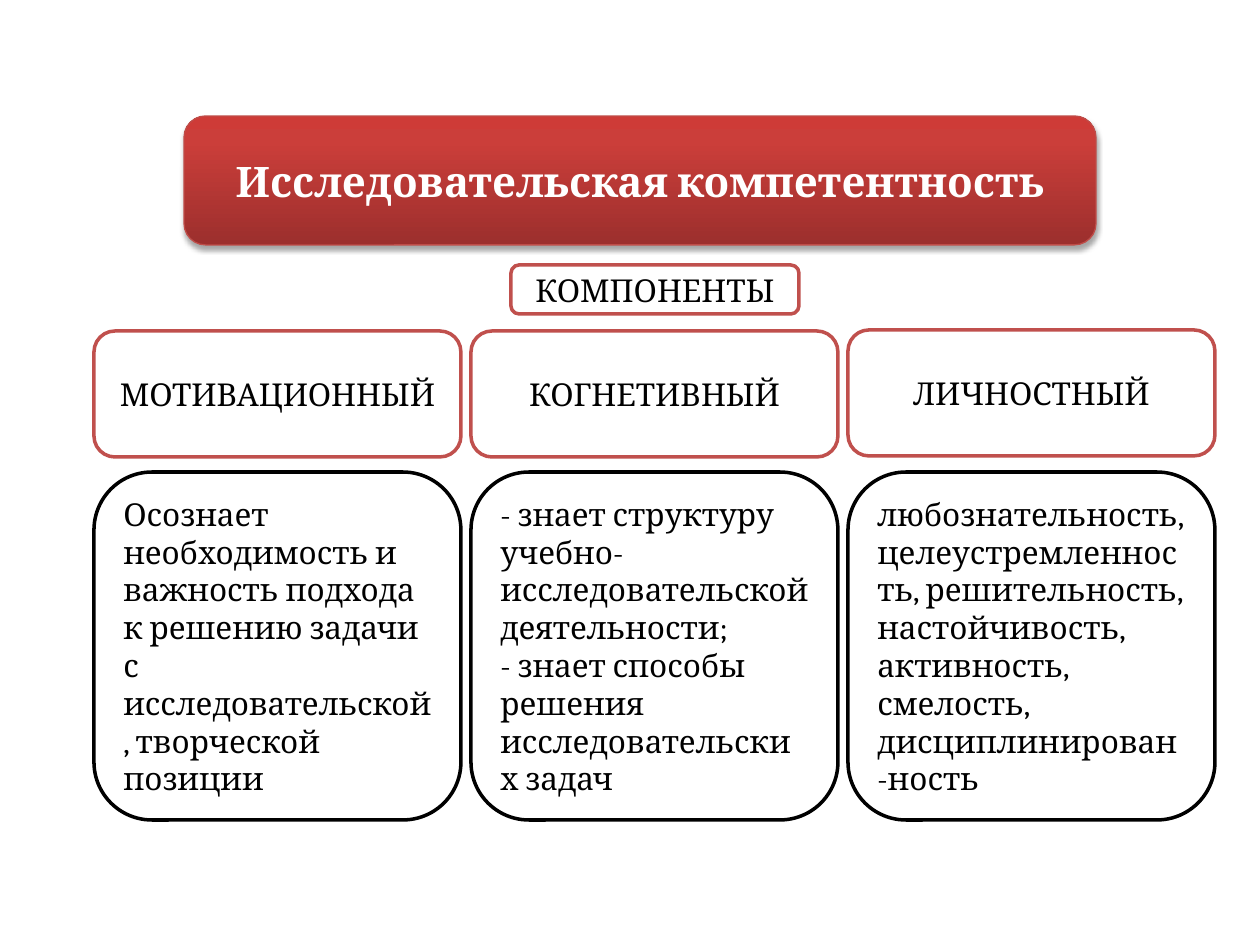
from copy import deepcopy

from lxml.etree import SubElement
from pptx import Presentation
from pptx.dml.color import RGBColor
from pptx.enum.shapes import MSO_SHAPE as SHAPE
from pptx.enum.text import MSO_ANCHOR as ANCHOR, PP_ALIGN as ALIGN
from pptx.oxml.ns import qn
from pptx.util import Emu, Pt

PX = 914400 / 126
WHITE = RGBColor(0xFF, 0xFF, 0xFF)
BLACK = RGBColor(0, 0, 0)
RED = RGBColor(0xC0, 0x50, 0x4D)
HEADER_LINE = RGBColor(0xBF, 0x4C, 0x48)
HEADER_STOPS = [
    (0, RGBColor(0x9C, 0x2F, 0x2D)),
    (0.8, RGBColor(0xCB, 0x3E, 0x3A)),
    (1, RGBColor(0xCE, 0x3B, 0x37)),
]

prs = Presentation()
prs.slide_width = Emu(round(1260 * PX))
prs.slide_height = Emu(round(945 * PX))
s = prs.slides.add_slide(prs.slide_layouts[6])


def add_box(x, y, w, h, lines, line_color, align=ALIGN.CENTER,
            size=18, color=BLACK, bold=False, line_width=2):
    sp = s.shapes.add_shape(SHAPE.ROUNDED_RECTANGLE,
                            *(Emu(round(v * PX)) for v in (x, y, w, h)))
    sp.shadow.inherit = False
    sp.fill.solid()
    sp.fill.fore_color.rgb = WHITE
    sp.line.color.rgb = line_color
    sp.line.width = Pt(line_width)
    tf = sp.text_frame
    tf.word_wrap = True
    tf.vertical_anchor = ANCHOR.MIDDLE
    for i, text in enumerate(lines):
        p = tf.add_paragraph() if i else tf.paragraphs[0]
        p.alignment = align
        r = p.add_run()
        r.text = text
        r.font.name = "Cambria"
        r.font.size = Pt(size)
        r.font.bold = bold
        r.font.color.rgb = color
    return sp


# Header with gradient and soft shadow
header = add_box(184, 116, 912, 129, ["Исследовательская компетентность"],
                 HEADER_LINE, size=24, color=WHITE, bold=True, line_width=0.75)
header.fill.gradient()
header.fill.gradient_angle = 90
spPr = header._element.spPr
stop_list = spPr.find(qn("a:gradFill")).find(qn("a:gsLst"))
stop_list.append(deepcopy(stop_list[0]))
for stop, (position, color) in zip(header.fill.gradient_stops, HEADER_STOPS):
    stop.position = position
    stop.color.rgb = color
shadow = SubElement(spPr.find(qn("a:effectLst")), qn("a:outerShdw"),
                    blurRad=str(Pt(3.1)), dist=str(Pt(1.8)),
                    dir="5400000", rotWithShape="0")
shadow_color = SubElement(shadow, qn("a:srgbClr"), val="000000")
SubElement(shadow_color, qn("a:alpha"), val="35000")

# Subheading
add_box(511, 265, 288, 49, ["КОМПОНЕНТЫ"], RED)

# Three components: title above, description below
COLUMNS = [
    ("МОТИВАЦИОННЫЙ", 331,
     ["Осознает необходимость и важность подхода к решению задачи "
      "с исследовательской, творческой позиции"]),
    ("КОГНЕТИВНЫЙ", 331,
     ["- знает структуру учебно-исследовательской деятельности;",
      "- знает способы решения исследовательских задач"]),
    ("ЛИЧНОСТНЫЙ", 330,
     ["любознательность, целеустремленность, решительность, "
      "настойчивость, активность, смелость, дисциплинирован-ность"]),
]
for i, (title, top, description) in enumerate(COLUMNS):
    x = 94 + 377 * i
    add_box(x, top, 367, 126, [title], RED)
    add_box(x, 472, 367, 348, description, BLACK, align=ALIGN.LEFT)

prs.save("out.pptx")
